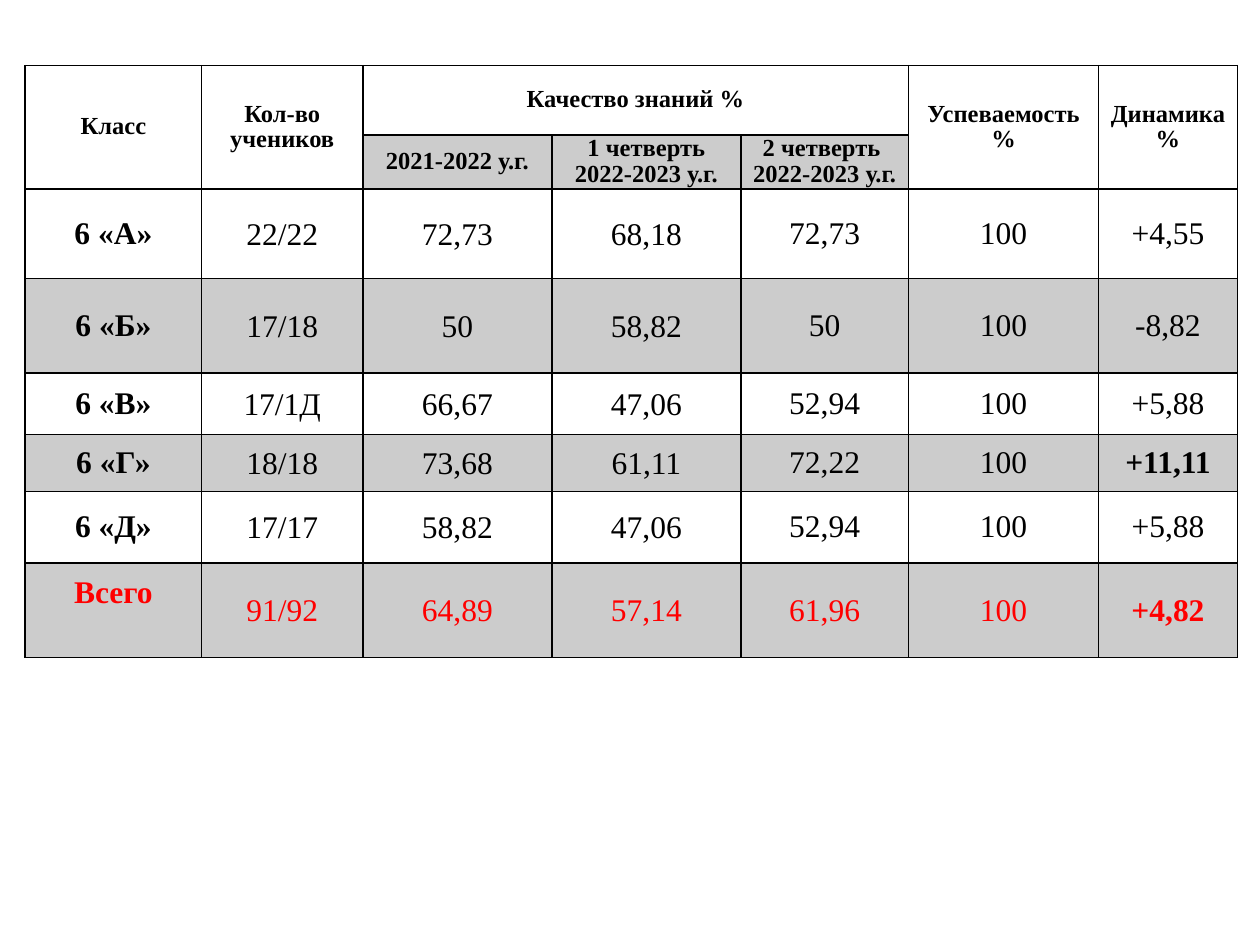
from copy import deepcopy

from pptx import Presentation
from pptx.dml.color import RGBColor
from pptx.enum.text import MSO_ANCHOR, PP_ALIGN
from pptx.oxml import parse_xml
from pptx.oxml.ns import nsdecls, qn
from pptx.util import Inches, Pt

COLORS = {"text": "000000", "total": "FF0000", "line": "000000", "band": "000000"}
BAND_OPACITY = 20
FONT = "Times New Roman"

ROWS = [
    ["Класс", "Кол-во учеников", "Качество знаний %", "", "", "Успеваемость %", "Динамика %"],
    ["", "", "2021-2022 у.г.", "1 четверть\n2022-2023 у.г.", "2 четверть \n2022-2023 у.г.", "", ""],
    ["6 «А»", "22/22", "72,73", "68,18", "72,73", "100", "+4,55"],
    ["6 «Б»", "17/18", "50", "58,82", "50", "100", "-8,82"],
    ["6 «В»", "17/1Д", "66,67", "47,06", "52,94", "100", "+5,88"],
    ["6 «Г»", "18/18", "73,68", "61,11", "72,22", "100", "+11,11"],
    ["6 «Д»", "17/17", "58,82", "47,06", "52,94", "100", "+5,88"],
    ["Всего", "91/92", "64,89", "57,14", "61,96", "100", "+4,82"],
]
COL_WIDTHS = [1.4, 1.28, 1.5, 1.5, 1.33, 1.51, 1.1]
ROW_HEIGHTS = [0.55, 0.43, 0.71, 0.75, 0.49, 0.45, 0.57, 0.75]
MERGES = [((0, c), (1, c)) for c in (0, 1, 5, 6)] + [((0, 2), (0, 4))]
HEADER_ROWS = 2
TOTAL_ROW = len(ROWS) - 1
BOLD_CHANGES = {"+11,11", "+4,82"}
SCORE_COLS = (1, 2, 3)


def add_borders(cell):
    tcPr = cell._tc.get_or_add_tcPr()
    for i, side in enumerate("LRTB"):
        tcPr.insert(i, parse_xml(
            f'<a:ln{side} {nsdecls("a")} w="{Pt(1)}"><a:solidFill>'
            f'<a:srgbClr val="{COLORS["line"]}"/></a:solidFill></a:ln{side}>'))


def fill_cell(cell, banded):
    if not banded:
        cell.fill.background()
        return
    cell.fill.solid()
    cell.fill.fore_color.rgb = RGBColor.from_string(COLORS["band"])
    clr = cell._tc.tcPr.find(".//" + qn("a:srgbClr"))
    clr.append(parse_xml(f'<a:alpha {nsdecls("a")} val="{BAND_OPACITY * 1000}"/>'))


def write_cell(cell, text, row, col):
    header = row < HEADER_ROWS
    tight = col in SCORE_COLS and not header
    side = 0.01 if tight else 0.07
    margins = {"margin_left": side, "margin_right": side,
               "margin_top": 0.01 if tight else 0,
               # the total label sits half a line above the middle
               "margin_bottom": 0.28 if (row, col) == (TOTAL_ROW, 0) else 0}
    for name, value in margins.items():
        setattr(cell, name, Inches(value))
    cell.vertical_anchor = MSO_ANCHOR.MIDDLE

    p = cell.text_frame.paragraphs[0]
    p.text = text
    p.alignment = PP_ALIGN.CENTER
    if header:
        p.line_spacing = 0.95
    style = {"name": FONT, "size": Pt(14 if header else 18),
             "bold": header or col == 0 or text in BOLD_CHANGES}
    color = COLORS["total" if row == TOTAL_ROW else "text"]
    for r in p.runs:
        for name, value in style.items():
            setattr(r.font, name, value)
        r.font.color.rgb = RGBColor.from_string(color)
    for br in p._p.findall(qn("a:br")):
        br.append(deepcopy(p.runs[0]._r.rPr))


prs = Presentation()
prs.slide_width, prs.slide_height = Inches(10), Inches(7.5)
s = prs.slides.add_slide(prs.slide_layouts[6])

frame = s.shapes.add_table(len(ROWS), len(COL_WIDTHS), Inches(0.2), Inches(0.52),
                           Inches(sum(COL_WIDTHS)), Inches(sum(ROW_HEIGHTS)))
table = frame.table
table.first_row = table.horz_banding = False
for column, width in zip(table.columns, COL_WIDTHS):
    column.width = Inches(width)
for row, height in zip(table.rows, ROW_HEIGHTS):
    row.height = Inches(height)
for start, end in MERGES:
    table.cell(*start).merge(table.cell(*end))

for i, texts in enumerate(ROWS):
    for j, text in enumerate(texts):
        cell = table.cell(i, j)
        fill_cell(cell, banded=i % 2 == 1 and not cell.is_spanned)
        add_borders(cell)
        if not cell.is_spanned:
            write_cell(cell, text, i, j)

prs.save("out.pptx")
